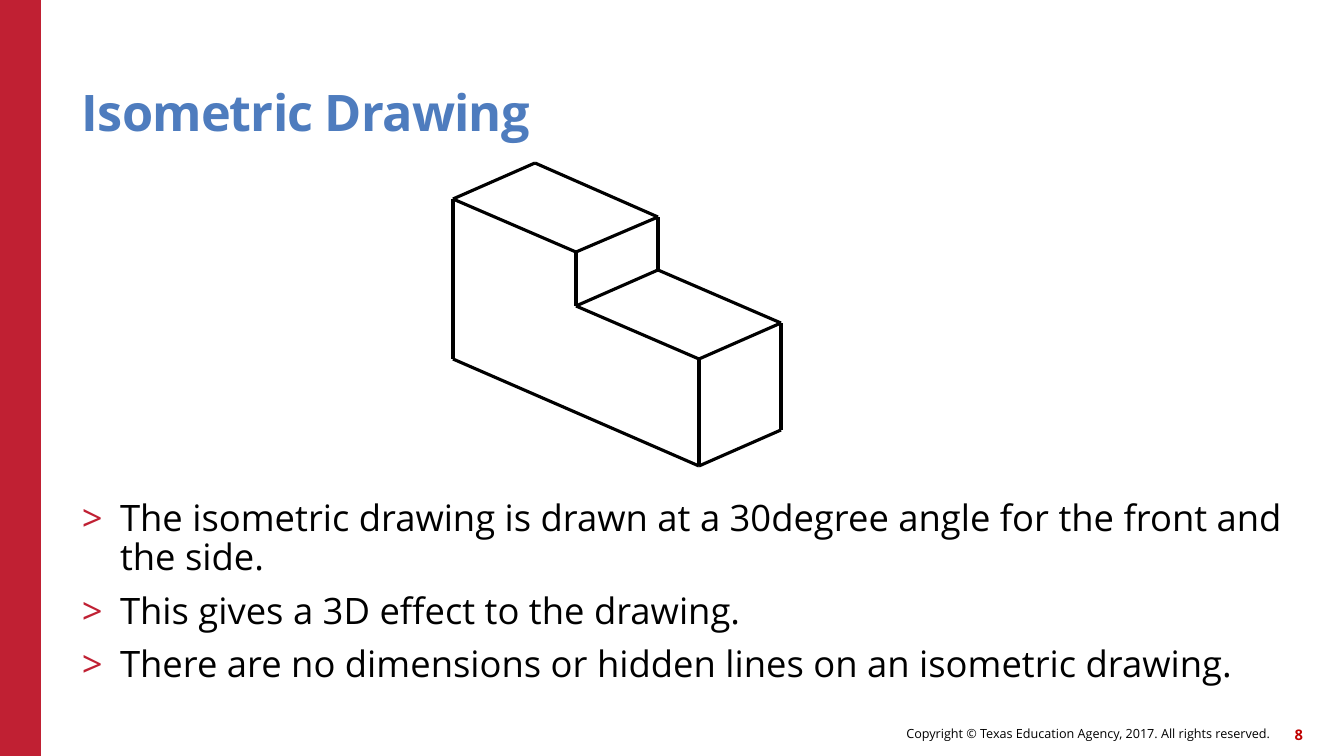
from lxml import etree
from pptx import Presentation
from pptx import util as u
from pptx.dml.color import RGBColor
from pptx.enum import shapes, text
from pptx.oxml.ns import qn

EMU_PER_PX = 914400 / 100.8
FONT = "Open Sans"
COLORS = {"red": "C02033", "number": "C00000", "title": "4E7CBE", "ink": "000000"}
BULLETS = [
    "The isometric drawing is drawn at a 30degree angle for the front and the side.",
    "This gives a 3D effect to the drawing.",
    "There are no dimensions or hidden lines on an isometric drawing.",
]
# Front face of the stepped block as (along, up), from the bottom left corner
FRONT = [(0, 0), (6, 0), (6, 6), (3, 6), (3, 9), (0, 9)]
DEPTH = 2


def px(n):
    return u.Emu(round(n * EMU_PER_PX))


def color(name):
    return RGBColor.from_string(COLORS[name])


def iso(along, up, depth):
    """Project a point of the block onto the slide, in px."""
    return round(453 + 41 * (along + depth)), round(359 + 17.8 * (along - depth - up))


class SlideBuilder:
    def __init__(self, prs):
        self.s = prs.slides.add_slide(prs.slide_layouts[1])

    def frame(self, sp, box, anchor):
        sp.left, sp.top, sp.width, sp.height = map(px, box)
        tf = sp.text_frame
        tf.auto_size = text.MSO_AUTO_SIZE.NONE
        tf.word_wrap = True
        tf.vertical_anchor = anchor
        tf.margin_left = tf.margin_top = tf.margin_right = tf.margin_bottom = 0
        return tf

    def style(self, p, size, fill, align, bold=False):
        p.alignment = align
        for r in p.runs:
            r.font.name = FONT
            r.font.size = u.Pt(size)
            r.font.bold = bold
            r.font.color.rgb = color(fill)

    def bar(self, *box):
        sp = self.s.shapes.add_shape(shapes.MSO_SHAPE.RECTANGLE, *map(px, box))
        sp.shadow.inherit = False
        sp.fill.solid()
        sp.fill.fore_color.rgb = color("red")
        sp.line.fill.background()

    def title(self, words, *box):
        tf = self.frame(self.s.shapes.title, box, text.MSO_ANCHOR.BOTTOM)
        tf.text = words
        p = tf.paragraphs[0]
        p.line_spacing = 0.9
        self.style(p, 36, "title", text.PP_ALIGN.LEFT, bold=True)
        p.runs[0].font._element.set("spc", "-60")

    def bullets(self, items, *box):
        tf = self.frame(self.s.placeholders[1], box, text.MSO_ANCHOR.TOP)
        tf.text = "\n".join(items)
        for i, p in enumerate(tf.paragraphs):
            pPr = p._p.get_or_add_pPr()
            pPr.set("marL", str(px(38)))
            pPr.set("indent", str(-px(38)))
            tint = etree.SubElement(pPr, qn("a:buClr"))
            etree.SubElement(tint, qn("a:srgbClr"), val=COLORS["red"])
            etree.SubElement(pPr, qn("a:buFont"), typeface=FONT)
            etree.SubElement(pPr, qn("a:buChar"), char=">")
            p.line_spacing = 0.9
            p.space_before = u.Pt(10 if i else 0)
            self.style(p, 26, "ink", text.PP_ALIGN.LEFT)

    def footer(self, words, size, fill, bold, *box):
        sp = self.s.shapes.add_textbox(0, 0, 0, 0)
        tf = self.frame(sp, box, text.MSO_ANCHOR.MIDDLE)
        tf.text = words
        self.style(tf.paragraphs[0], size, fill, text.PP_ALIGN.RIGHT, bold)

    def edge(self, start, end):
        line = self.s.shapes.add_connector(
            shapes.MSO_CONNECTOR.STRAIGHT, *map(px, start + end))
        line.line.color.rgb = color("ink")
        line.line.width = u.Pt(2.25)
        etree.SubElement(line._element.spPr, qn("a:effectLst"))

    def stepped_block(self):
        """Draw the front outline, the receding edges and the visible back edges."""
        front = [iso(*corner, 0) for corner in FRONT]
        back = [iso(*corner, DEPTH) for corner in FRONT]
        edges = list(zip(front, front[1:] + front[:1]))
        edges += zip(front[1:], back[1:])
        edges += zip(back[1:], back[2:])
        for start, end in edges:
            self.edge(start, end)


def main():
    prs = Presentation()
    prs.slide_width, prs.slide_height = px(1344), px(756)
    slide = SlideBuilder(prs)
    slide.bar(0, 0, 41, 756)
    slide.footer("Copyright © Texas Education Agency, 2017. All rights reserved.",
                 9, "ink", False, 619, 718, 651, 32)
    slide.footer("8", 10.5, "number", True, 1261, 719, 42, 32)
    slide.title("Isometric Drawing", 82, 45, 1109, 97)
    slide.bullets(BULLETS, 82, 500, 1219, 206)
    slide.stepped_block()
    prs.save("out.pptx")


if __name__ == "__main__":
    main()
